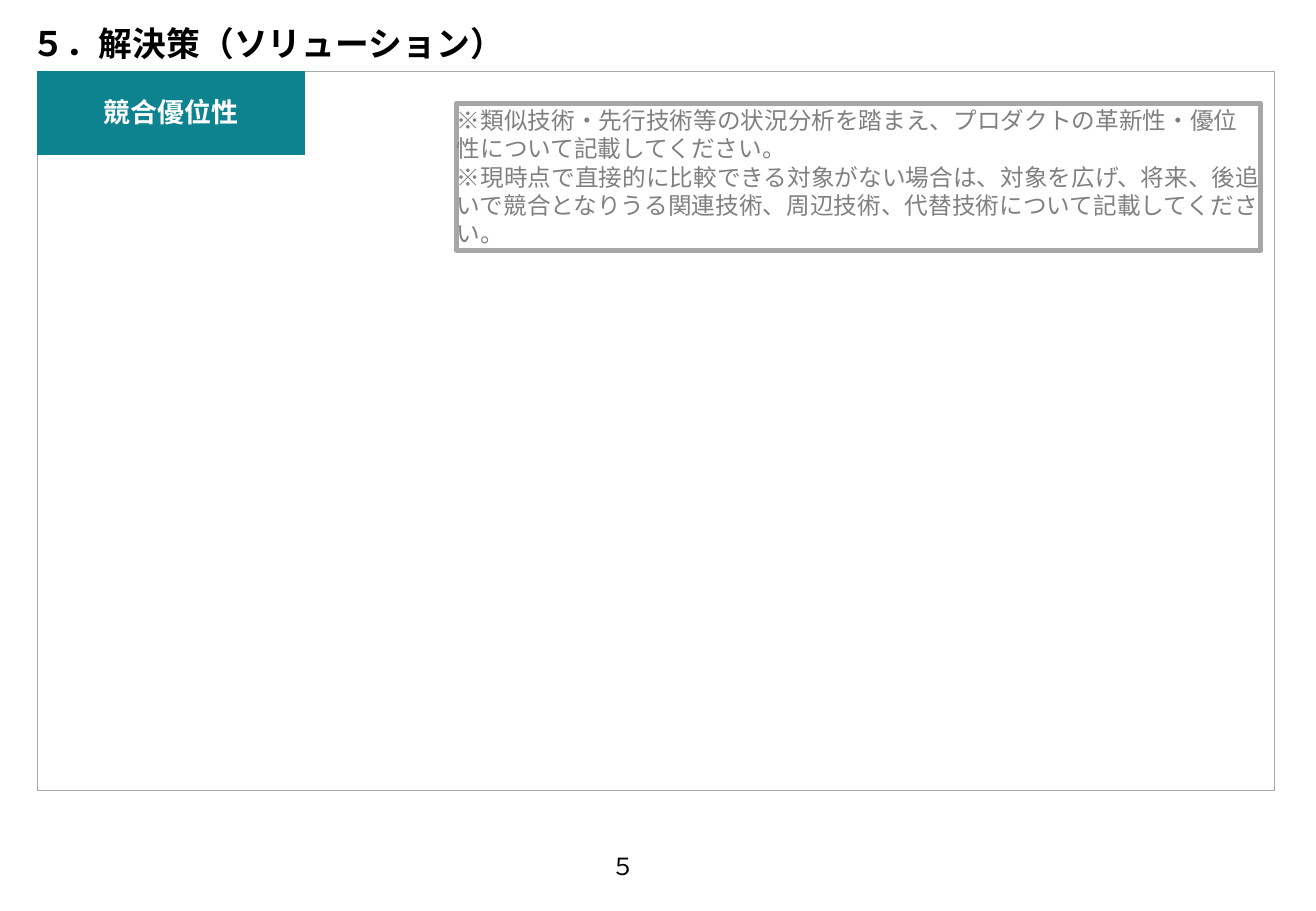
from dataclasses import dataclass
from typing import Optional

from lxml.etree import SubElement
from pptx import Presentation
from pptx.dml.color import RGBColor
from pptx.enum.shapes import MSO_SHAPE as Shape
from pptx.enum.text import MSO_ANCHOR as Anchor, MSO_AUTO_SIZE as AutoSize, PP_ALIGN as Align
from pptx.oxml.ns import qn
from pptx.util import Pt

FONT = "Noto Sans CJK JP"
COLORS = {
    "white": "FFFFFF", "black": "000000", "teal": "0D8390",
    "frame": "A7A8AA", "border": "A6A6A6", "note": "808080",
}


@dataclass
class Block:
    bounds: tuple[float, float, float, float]
    text: str = ""
    size: float = 14
    color: str = "black"
    bold: bool = False
    align: Align = Align.LEFT
    anchor: Anchor = Anchor.TOP
    margins: tuple[float, float, float, float] = (0, 0, 0, 0)
    line_spacing: Optional[float] = None
    wrap: bool = True


@dataclass
class Panel(Block):
    fill: Optional[str] = None
    line: str = "frame"
    line_width: float = 0.5


def rgb(name: str) -> RGBColor:
    return RGBColor.from_string(COLORS[name])


def write_text(shape, block: Block) -> None:
    frame = shape.text_frame
    frame.word_wrap = block.wrap
    frame.auto_size = AutoSize.NONE if block.wrap else AutoSize.SHAPE_TO_FIT_TEXT
    frame.vertical_anchor = block.anchor
    (frame.margin_left, frame.margin_top,
     frame.margin_right, frame.margin_bottom) = map(Pt, block.margins)
    frame.text = block.text
    for paragraph in frame.paragraphs:
        paragraph.alignment = block.align
        if block.line_spacing:
            paragraph.line_spacing = Pt(block.line_spacing)
        for run in paragraph.runs:
            font = run.font
            font.name, font.size, font.bold = FONT, Pt(block.size), block.bold
            font.color.rgb = rgb(block.color)
            # East Asian typeface
            SubElement(run._r.get_or_add_rPr(), qn("a:ea"), typeface=FONT)


def draw_panel(slide, panel: Panel) -> None:
    shape = slide.shapes.add_shape(Shape.RECTANGLE, *map(Pt, panel.bounds))
    shape.shadow.inherit = False
    if panel.fill:
        shape.fill.solid()
        shape.fill.fore_color.rgb = rgb(panel.fill)
    else:
        shape.fill.background()
    shape.line.color.rgb = rgb(panel.line)
    shape.line.width = Pt(panel.line_width)
    if panel.text:
        write_text(shape, panel)


def draw_text(slide, block: Block) -> None:
    write_text(slide.shapes.add_textbox(*map(Pt, block.bounds)), block)


LEFT, TOP = 22.3, 42.5

PANELS = [
    # Content frame
    Panel((LEFT, TOP, 733, 426.2), fill="white"),
    # Writing guidance
    Panel((270.7, 61.2, 476.6, 87.1),
          "※類似技術・先行技術等の状況分析を踏まえ、プロダクトの革新性・優位性について記載してください。\n"
          "※現時点で直接的に比較できる対象がない場合は、対象を広げ、将来、後追いで競合となりうる"
          "関連技術、周辺技術、代替技術について記載してください。",
          color="note", anchor=Anchor.MIDDLE, line="border", line_width=3),
    # Section label
    Panel((LEFT, TOP, 158.4, 49), "競合優位性", size=16, color="white", bold=True,
          align=Align.CENTER, anchor=Anchor.MIDDLE, margins=(5.76, 11.76, 5.76, 5.76),
          line_spacing=12, fill="teal", line="teal"),
]

TEXTS = [
    # Title
    Block((11.5, 10.1, 714.2, 32.4), "５．解決策（ソリューション）", size=20, bold=True,
          margins=(7.2, 3.6, 7.2, 3.6)),
    # Page number
    Block((362.2, 504.7, 14.4, 17.3), "５", wrap=False),
]


def main() -> None:
    presentation = Presentation()
    presentation.slide_width, presentation.slide_height = Pt(780), Pt(540)
    slide = presentation.slides.add_slide(presentation.slide_layouts[6])
    for panel in PANELS:
        draw_panel(slide, panel)
    for block in TEXTS:
        draw_text(slide, block)
    presentation.save("out.pptx")


if __name__ == "__main__":
    main()
